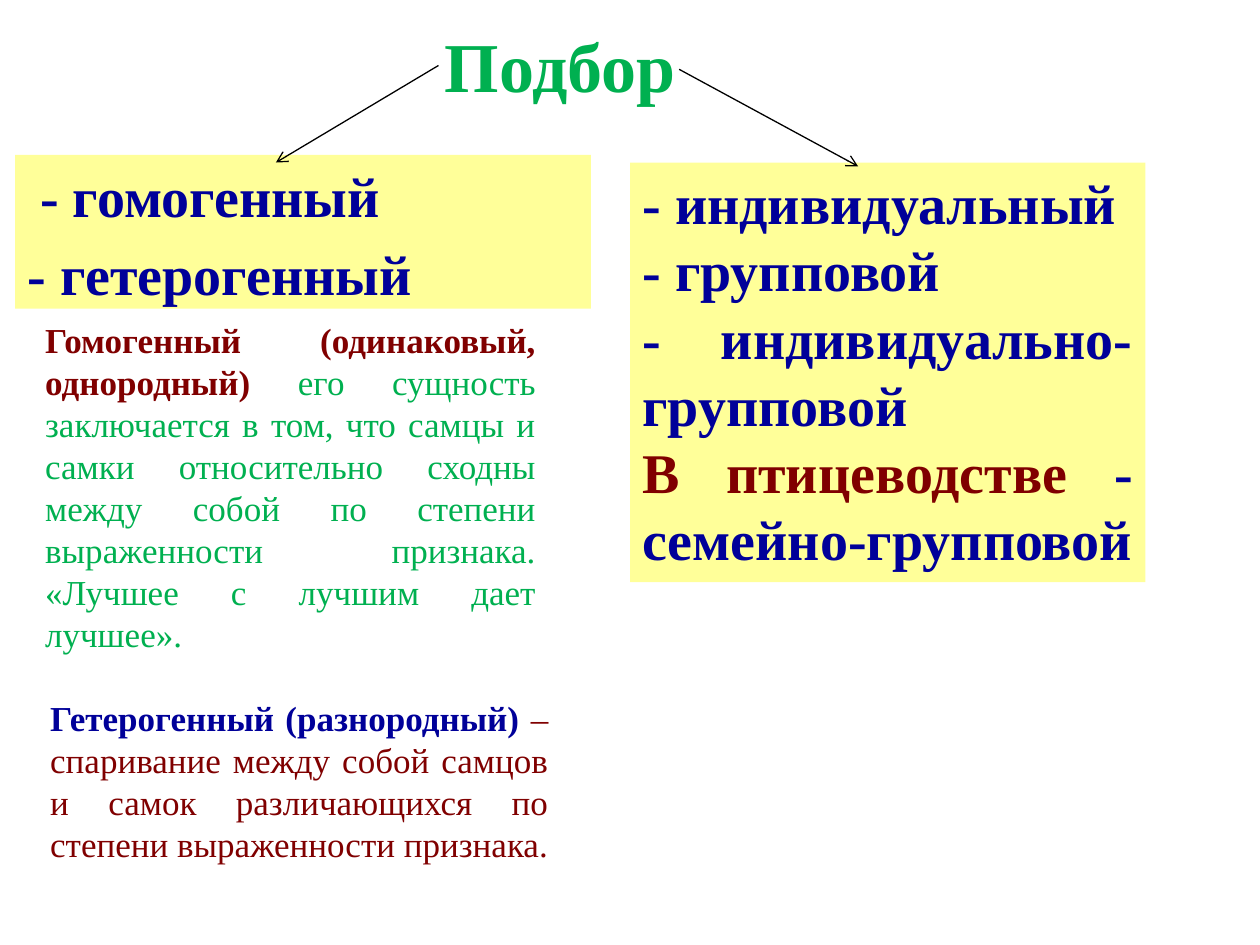
import pptx
import pptx.util
import pptx.dml.color
import pptx.enum.shapes
import pptx.enum.text
import pptx.oxml.ns
from dataclasses import dataclass
from lxml import etree

Inches = pptx.util.Inches
Align = pptx.enum.text.PP_ALIGN
Anchor = pptx.enum.text.MSO_ANCHOR
Fit = pptx.enum.text.MSO_AUTO_SIZE
qn = pptx.oxml.ns.qn


@dataclass(frozen=True)
class Theme:
    font: str = "Times New Roman"
    navy: str = "000099"
    red: str = "800000"
    green: str = "00B050"
    cream: str = "FFFF99"
    ink: str = "000000"
    head: int = 40
    list: int = 32
    note: int = 20


THEME = Theme()


def rgb(code):
    return pptx.dml.color.RGBColor.from_string(code)


def place(shape, left, top, width, height):
    shape.left, shape.top = Inches(left), Inches(top)
    shape.width, shape.height = Inches(width), Inches(height)


def paint(shape, color):
    shape.fill.solid()
    shape.fill.fore_color.rgb = rgb(color)


def write(para, text, size=THEME.note, color=THEME.navy, bold=True):
    run = para.add_run()
    run.text = text
    font = run.font
    font.name, font.size, font.bold = THEME.font, pptx.util.Pt(size), bold
    font.color.rgb = rgb(color)


def fill_text(shape, lines, size, align=Align.JUSTIFY, anchor=Anchor.TOP, wrap=True):
    frame = shape.text_frame
    frame.auto_size = Fit.NONE
    frame.word_wrap = wrap
    frame.vertical_anchor = anchor
    for index, line in enumerate(lines):
        para = frame.add_paragraph() if index else frame.paragraphs[0]
        para.alignment = align
        for text, style in line:
            write(para, text, size=size, **style)


def clear_bullet(para, indent=0):
    props = para._p.get_or_add_pPr()
    props.set("marL", str(Inches(indent)))
    props.set("indent", "0")
    etree.SubElement(props, qn("a:buNone"))


def add_title(slide, text):
    title = slide.shapes.title
    place(title, 3.43, 0.13, 2.05, 0.77)
    fill_text(title, [[(text, {"color": THEME.green})]], THEME.head,
              align=Align.LEFT, wrap=False)


def add_list(slide, items):
    body = slide.placeholders[1]
    place(body, 0.12, 1.23, 4.57, 1.22)
    paint(body, THEME.cream)
    fill_text(body, [[(item, {})] for item in items], THEME.list, align=Align.LEFT)
    for para, indent in zip(body.text_frame.paragraphs, (0.1, 0)):
        clear_bullet(para, indent)


def add_panel(slide, box, lines):
    panel = slide.shapes.add_shape(
        pptx.enum.shapes.MSO_SHAPE.RECTANGLE, *map(Inches, box))
    panel.shadow.inherit = False
    panel.line.fill.background()
    paint(panel, THEME.cream)
    fill_text(panel, lines, THEME.list)


def add_note(slide, box, term, term_color, text, color):
    note = slide.shapes.add_textbox(*map(Inches, box))
    line = [(term + " ", {"color": term_color}),
            (text, {"color": color, "bold": False})]
    fill_text(note, [line], THEME.note)


def add_arrow(slide, start, end):
    arrow = slide.shapes.add_connector(
        pptx.enum.shapes.MSO_CONNECTOR.STRAIGHT, *map(Inches, start + end))
    arrow.line.color.rgb = rgb(THEME.ink)
    arrow.line.width = pptx.util.Pt(0.75)
    etree.SubElement(arrow.line._get_or_add_ln(), qn("a:tailEnd"), type="arrow")
    etree.SubElement(arrow._element.spPr, qn("a:effectLst"))


def main():
    deck = pptx.Presentation()
    deck.slide_width, deck.slide_height = Inches(10), Inches(7.5)
    slide = deck.slides.add_slide(deck.slide_layouts[1])

    add_title(slide, "Подбор")
    add_list(slide, ["- гомогенный", "- гетерогенный"])
    add_panel(slide, (5, 1.29, 4.09, 3.33), [
        [("- индивидуальный", {})],
        [("- групповой", {})],
        [("- индивидуально-групповой", {})],
        [("В птицеводстве ", {"color": THEME.red}), ("- семейно-групповой", {})],
    ])
    add_note(slide, (0.26, 2.48, 4.09, 2.79),
             "Гомогенный (одинаковый, однородный)", THEME.red,
             "его сущность заключается в том, что самцы и самки относительно "
             "сходны между собой по степени выраженности признака. "
             "«Лучшее с лучшим дает лучшее».", THEME.green)
    add_note(slide, (0.3, 5.48, 4.15, 1.78),
             "Гетерогенный (разнородный)", THEME.navy,
             "– спаривание между собой самцов и самок различающихся "
             "по степени выраженности признака.", THEME.red)
    add_arrow(slide, (3.48, 0.52), (2.19, 1.29))
    add_arrow(slide, (5.39, 0.55), (6.81, 1.32))

    deck.save("out.pptx")


if __name__ == "__main__":
    main()
